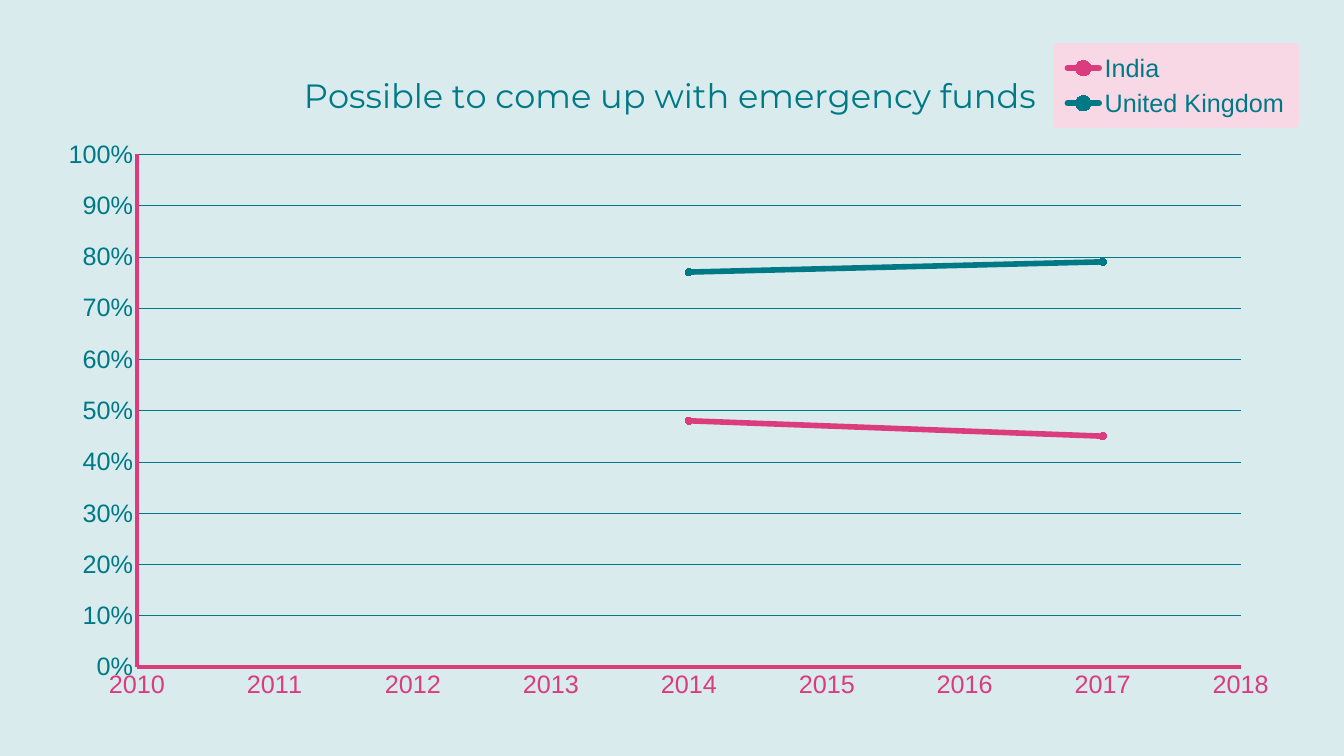
from lxml import etree
from pptx import Presentation, util as u
from pptx.chart.data import XyChartData
from pptx.dml.color import RGBColor
from pptx.enum import chart as ch
from pptx.oxml import parse_xml
from pptx.oxml.ns import nsdecls, qn

PX = 12192000 / 1344
COLORS = {"teal": "007987", "pink": "DA3C7E", "back": "D9EBED", "legend": "F8D8E5"}
CHART_BOX = (44, 43, 1255, 669)
YEARS = (2011, 2014, 2017)
SERIES = [
    ("India", (None, 0.48, 0.45), "pink"),
    ("United Kingdom", (None, 0.77, 0.79), "teal"),
]


def px(n):
    return u.Emu(round(n * PX))


def rgb(name):
    return RGBColor.from_string(COLORS[name])


def style_font(font, color, size=18, name="Arial"):
    font.name, font.size, font.bold = name, u.Pt(size), False
    font.color.rgb = rgb(color)


def style_line(line, color, width):
    line.color.rgb = rgb(color)
    line.width = u.Pt(width)


def place(element, index, left, top, width=None, height=None, inner=False):
    """Give a chart part a manual layout, in slide px."""
    for old in element.findall(qn("c:layout")):
        element.remove(old)
    x0, y0, w0, h0 = CHART_BOX
    layout = parse_xml(f"<c:layout {nsdecls('c')}><c:manualLayout/></c:layout>")
    settings = [("layoutTarget", "inner")] if inner else []
    settings += [("xMode", "edge"), ("yMode", "edge"),
                 ("x", (left - x0) / w0), ("y", (top - y0) / h0)]
    if width:
        settings += [("w", width / w0), ("h", height / h0)]
    for tag, value in settings:
        etree.SubElement(layout[0], qn(f"c:{tag}")).set("val", str(value))
    element.insert(index, layout)


def style_axis(axis, color, low, high, step, number_format):
    axis.minimum_scale, axis.maximum_scale, axis.major_unit = low, high, step
    axis.major_tick_mark = axis.minor_tick_mark = ch.XL_TICK_MARK.NONE
    axis.tick_labels.number_format = number_format
    axis.tick_labels.number_format_is_linked = False
    style_font(axis.tick_labels.font, color)
    style_line(axis.format.line, "pink", 2.5)


def add_title(chart, title):
    chart.has_title = True
    p = chart.chart_title.text_frame.paragraphs[0]
    r = p.add_run()
    r.text = title
    for font in (p.font, r.font):
        style_font(font, "teal", 24, "Montserrat")
    place(chart.chart_title._element, 1, 298, 66)


def add_legend(chart):
    chart.has_legend = True
    legend = chart.legend
    legend.position = ch.XL_LEGEND_POSITION.CORNER
    legend.include_in_layout = True
    style_font(legend.font, "teal")
    place(legend._element, 1, 1057, 47, 238, 77)
    fill = f'<a:solidFill><a:srgbClr val="{COLORS["legend"]}"/></a:solidFill>'
    legend._element.find(qn("c:overlay")).addnext(parse_xml(
        f'<c:spPr {nsdecls("c", "a")}>{fill}'
        f'<a:ln w="76200">{fill}<a:round/></a:ln></c:spPr>'))


def blank_missing_points(chart):
    """Leave a point without a value empty in the chart data."""
    for point in list(chart._chartSpace.iter(qn("c:pt"))):
        if point.findtext(qn("c:v")) in ("None", "", None):
            point.getparent().remove(point)


def add_scatter(slide):
    data = XyChartData()
    for name, shares, _ in SERIES:
        series = data.add_series(name)
        for year, share in zip(YEARS, shares):
            series.add_data_point(year, share)
    chart = slide.shapes.add_chart(
        ch.XL_CHART_TYPE.XY_SCATTER_LINES, *map(px, CHART_BOX), data).chart
    blank_missing_points(chart)
    style_font(chart.font, "teal")
    chart.plots[0].vary_by_categories = False

    # Lines and markers
    for series, (_, _, color) in zip(chart.plots[0].series, SERIES):
        style_line(series.format.line, color, 4)
        series.format.line._get_or_add_ln().set("cap", "rnd")
        marker = series.marker
        marker.style, marker.size = ch.XL_MARKER_STYLE.CIRCLE, 5
        marker.format.fill.solid()
        marker.format.fill.fore_color.rgb = rgb(color)
        marker.format.line.color.rgb = rgb(color)

    # Axes and grid
    style_axis(chart.category_axis, "pink", 2010, 2018, 1, "0")
    style_axis(chart.value_axis, "teal", 0, 1, 0.1, "0%")
    chart.category_axis.has_major_gridlines = False
    chart.value_axis.has_major_gridlines = True
    style_line(chart.value_axis.major_gridlines.format.line, "teal", 0.25)
    plot_area = chart._chartSpace.find(f".//{qn('c:plotArea')}")
    place(plot_area, 0, 137, 154, 1104, 513, inner=True)
    return chart


def main():
    prs = Presentation()
    prs.slide_width, prs.slide_height = px(1344), px(756)
    slide = prs.slides.add_slide(prs.slide_layouts[6])
    slide.background.fill.solid()
    slide.background.fill.fore_color.rgb = rgb("back")

    chart = add_scatter(slide)
    add_title(chart, "Possible to come up with emergency funds")
    add_legend(chart)
    prs.save("out.pptx")


if __name__ == "__main__":
    main()
